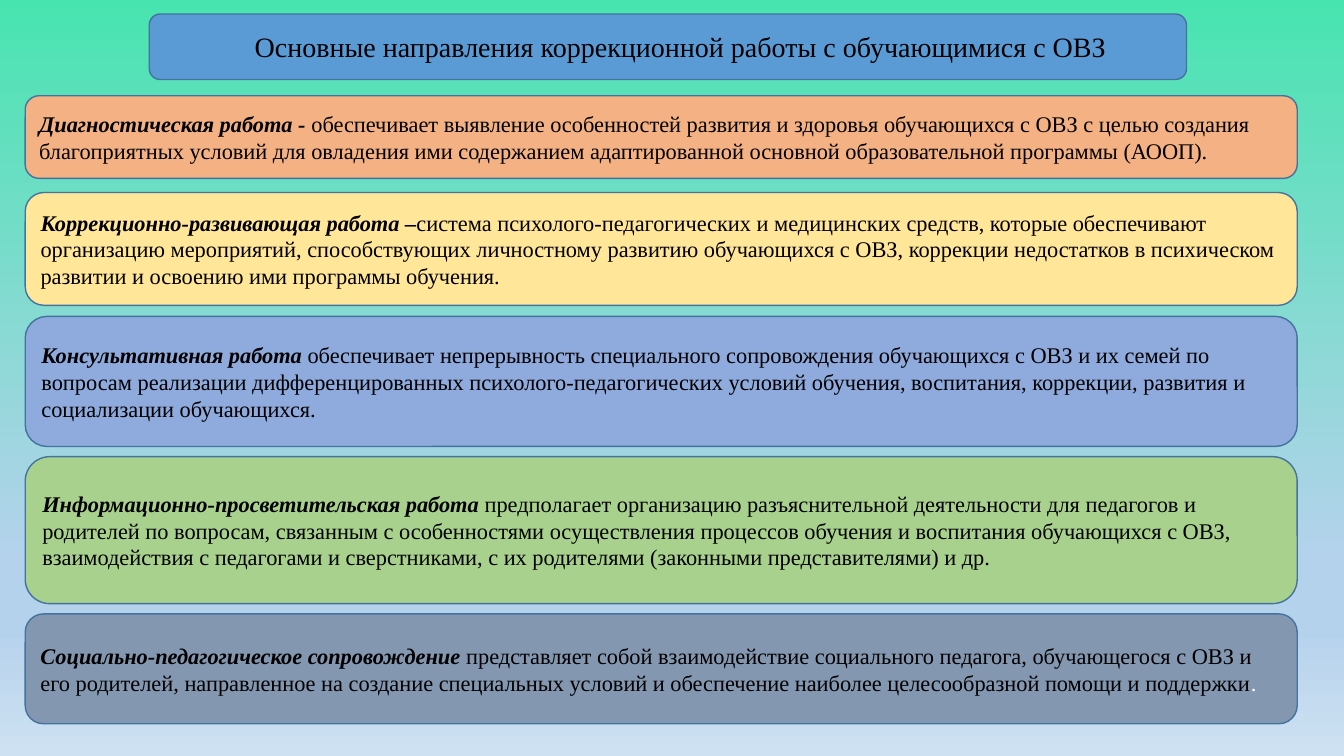
from lxml import etree
from pptx import Presentation
from pptx.dml.color import RGBColor
from pptx.enum.shapes import MSO_SHAPE
from pptx.enum.text import MSO_ANCHOR, PP_ALIGN
from pptx.oxml.ns import qn
from pptx.util import Pt

ROUNDED = MSO_SHAPE.ROUNDED_RECTANGLE
MIDDLE = MSO_ANCHOR.MIDDLE
LEFT, CENTER = PP_ALIGN.LEFT, PP_ALIGN.CENTER

FONT = "Times New Roman"
BLACK = RGBColor(0x00, 0x00, 0x00)
WHITE = RGBColor(0xFF, 0xFF, 0xFF)
OUTLINE = RGBColor(0x43, 0x73, 0x9E)
BLUE = RGBColor(0x5B, 0x9B, 0xD5)
ORANGE = RGBColor(0xF4, 0xB1, 0x83)
YELLOW = RGBColor(0xFF, 0xE6, 0x99)
PERIWINKLE = RGBColor(0x8F, 0xAA, 0xDC)
GREEN = RGBColor(0xA9, 0xD1, 0x8E)
SLATE = RGBColor(0x84, 0x97, 0xB0)
MINT = RGBColor(0x48, 0xE4, 0xB0)
SKY = RGBColor(0xB5, 0xD2, 0xEC)
PALE_SKY = RGBColor(0xCE, 0xE1, 0xF2)
BACKGROUND_STOPS = [(0, MINT), (74, SKY), (83, SKY), (100, PALE_SKY)]

BAND_LEFT, BAND_WIDTH = 18, 908.6
# top, height, colour, term, explanation
BANDS = [
    (68.4, 59, ORANGE, "Диагностическая работа - ",
     "обеспечивает выявление особенностей развития и здоровья обучающихся с ОВЗ "
     "с целью создания благоприятных условий для овладения ими содержанием "
     "адаптированной основной образовательной программы (АООП)."),
    (137.5, 80.6, YELLOW, "Коррекционно-развивающая работа –",
     "система психолого-педагогических и медицинских средств, которые обеспечивают "
     "организацию мероприятий, способствующих личностному развитию обучающихся с ОВЗ, "
     "коррекции недостатков в психическом развитии и освоению ими программы обучения."),
    (226, 92.9, PERIWINKLE, "Консультативная работа ",
     "обеспечивает непрерывность специального сопровождения обучающихся с ОВЗ и их "
     "семей по вопросам реализации дифференцированных психолого-педагогических условий "
     "обучения, воспитания, коррекции, развития и социализации обучающихся."),
    (326.2, 105, GREEN, "Информационно-просветительская работа ",
     "предполагает организацию разъяснительной деятельности для педагогов и родителей "
     "по вопросам, связанным с особенностями осуществления процессов обучения и "
     "воспитания обучающихся с ОВЗ, взаимодействия с педагогами и сверстниками, "
     "с их родителями (законными представителями) и др."),
    (438.5, 78.5, SLATE, "Социально-педагогическое сопровождение ",
     "представляет собой взаимодействие социального педагога, обучающегося с ОВЗ и его "
     "родителей, направленное на создание специальных условий и обеспечение наиболее "
     "целесообразной помощи и поддержки"),
]


def add_box(left, top, width, height, color, align=LEFT):
    box = slide.shapes.add_shape(ROUNDED, Pt(left), Pt(top), Pt(width), Pt(height))
    box.shadow.inherit = False
    box.fill.solid()
    box.fill.fore_color.rgb = color
    box.line.color.rgb = OUTLINE
    box.line.width = Pt(1)
    box.text_frame.word_wrap = True
    box.text_frame.vertical_anchor = MIDDLE
    box.text_frame.paragraphs[0].alignment = align
    return box


def add_text(box, text, size=16, color=BLACK, emphasis=False):
    """Append a run to the box's paragraph; emphasis means bold italic."""
    span = box.text_frame.paragraphs[0].add_run()
    span.text = text
    span.font.name = FONT
    span.font.size = Pt(size)
    span.font.color.rgb = color
    span.font.bold = span.font.italic = emphasis


deck = Presentation()
deck.slide_width, deck.slide_height = Pt(960), Pt(540)
slide = deck.slides.add_slide(deck.slide_layouts[6])

background = slide.background.fill
background.gradient()
background.gradient_angle = 270
stop_list = next(slide.element.iter(qn("a:gsLst")))
for old_stop in list(stop_list):
    stop_list.remove(old_stop)
for percent, color in BACKGROUND_STOPS:
    stop = etree.SubElement(stop_list, qn("a:gs"), pos=str(percent * 1000))
    etree.SubElement(stop, qn("a:srgbClr"), val=str(color))

title = add_box(106.6, 10, 740.9, 46.8, BLUE, align=CENTER)
title.text_frame.margin_left = Pt(25.2)
add_text(title, "Основные направления коррекционной работы с обучающимися с ОВЗ", size=20)

for top, height, color, term, explanation in BANDS:
    band = add_box(BAND_LEFT, top, BAND_WIDTH, height, color)
    add_text(band, term, emphasis=True)
    add_text(band, explanation)
add_text(band, ".", color=WHITE)

deck.save("out.pptx")
